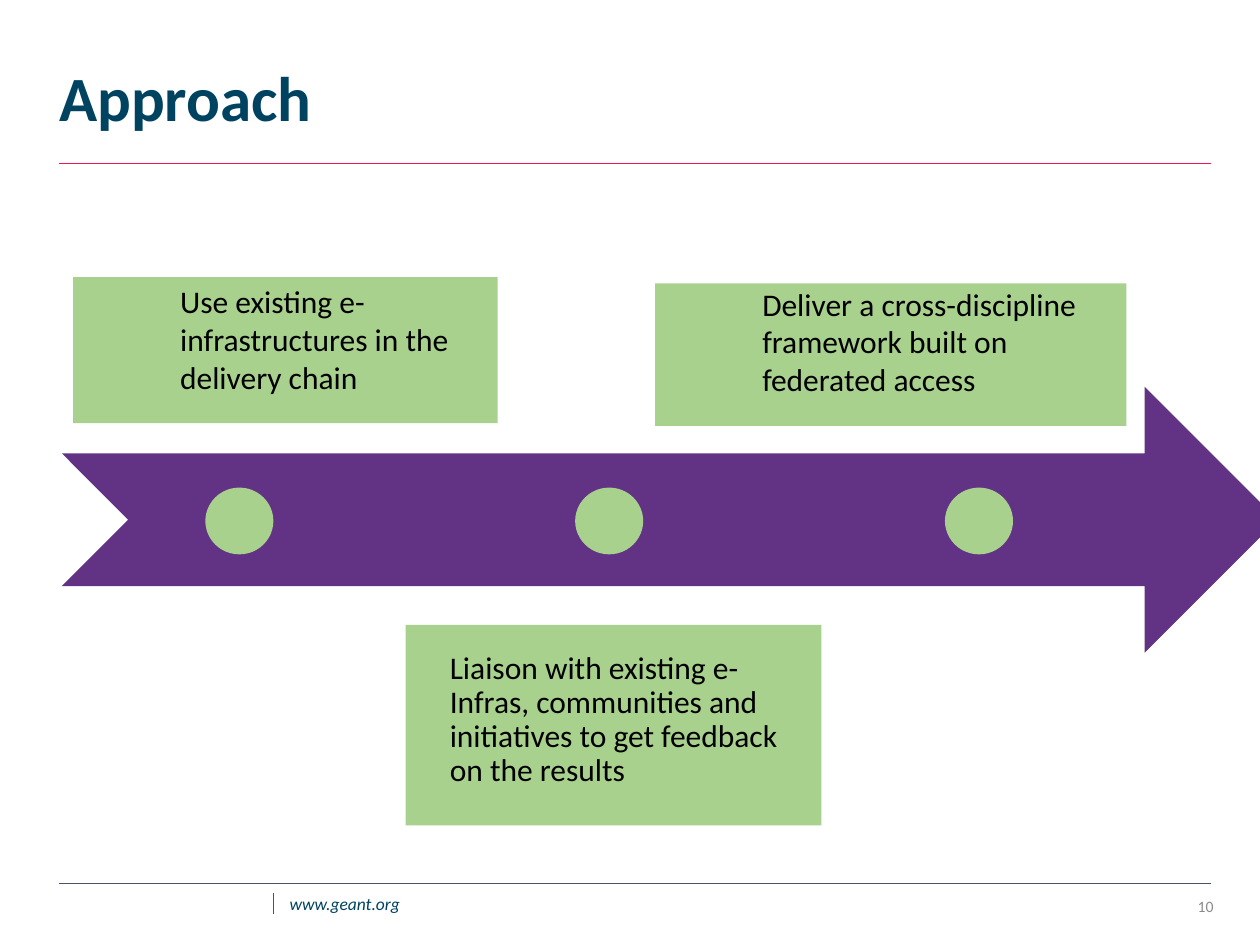
from dataclasses import dataclass

import pptx
import pptx.dml.color
import pptx.enum.shapes
import pptx.enum.text
import pptx.oxml.ns
import pptx.util
from pptx.dml.color import RGBColor
from pptx.enum.shapes import MSO_SHAPE
from pptx.enum.text import MSO_ANCHOR, PP_ALIGN
from pptx.util import Inches, Pt

FONT = "Calibri"
TEAL = RGBColor(0x00, 0x43, 0x61)
PINK = RGBColor(0xED, 0x15, 0x56)
SLATE = RGBColor(0x44, 0x54, 0x6A)
GREY = RGBColor(0x8C, 0x8C, 0x8C)
PURPLE = RGBColor(0x62, 0x33, 0x84)
GREEN = RGBColor(0xA9, 0xD1, 0x8E)
BLACK = RGBColor(0x00, 0x00, 0x00)

FIRST_DOT_LEFT = 1.63
DOT_STEP = 2.935


@dataclass(frozen=True)
class Box:
    left: float
    top: float
    width: float
    height: float

    def lengths(self) -> list[int]:
        return [Inches(v) for v in (self.left, self.top, self.width, self.height)]


@dataclass(frozen=True)
class Step:
    text: str
    box: Box
    above_arrow: bool


@dataclass(frozen=True)
class Rule:
    start: tuple[float, float]
    end: tuple[float, float]
    color: RGBColor


STEPS = [
    Step("Use existing e-infrastructures in the delivery chain",
         Box(0.58, 2.2, 3.37, 1.16), True),
    Step("Liaison with existing e-Infras, communities and initiatives "
         "to get feedback on the results",
         Box(3.22, 4.96, 3.3, 1.59), False),
    Step("Deliver a cross-discipline framework built on federated access",
         Box(5.2, 2.25, 3.74, 1.13), True),
]

RULES = [
    Rule((0.47, 1.3), (9.61, 1.3), PINK),
    Rule((0.47, 7.01), (9.61, 7.01), SLATE),
    Rule((2.17, 7.09), (2.17, 7.25), SLATE),
]


def style_text(frame, size: float, color: RGBColor, bold=False, italic=False) -> None:
    for run in frame.paragraphs[0].runs:
        run.font.name = FONT
        run.font.size = Pt(size)
        run.font.color.rgb = color
        run.font.bold = bold
        run.font.italic = italic


def add_filled(slide, kind: MSO_SHAPE, box: Box, color: RGBColor):
    shape = slide.shapes.add_shape(kind, *box.lengths())
    shape.shadow.inherit = False
    shape.fill.solid()
    shape.fill.fore_color.rgb = color
    shape.line.fill.background()
    return shape


def add_rule(slide, rule: Rule) -> None:
    ends = [Inches(v) for v in (*rule.start, *rule.end)]
    line = slide.shapes.add_connector(pptx.enum.shapes.MSO_CONNECTOR.STRAIGHT, *ends)
    line.line.color.rgb = rule.color
    line.line.width = Pt(0.5)
    pptx.oxml.ns.qn("a:effectLst")
    line._element.spPr.get_or_add_effectLst() if hasattr(
        line._element.spPr, "get_or_add_effectLst") else None


def add_label(slide, text: str, box: Box):
    frame = slide.shapes.add_textbox(*box.lengths()).text_frame
    frame.word_wrap = True
    frame.text = text
    return frame


def add_step(slide, step: Step) -> None:
    """Draw a step box; those above the arrow are indented and sit at the bottom."""
    frame = add_filled(slide, MSO_SHAPE.RECTANGLE, step.box, GREEN).text_frame
    frame.word_wrap = True
    frame.margin_left = Inches(0.35)
    frame.margin_right = frame.margin_top = frame.margin_bottom = Inches(0.22)
    frame.text = step.text
    paragraph = frame.paragraphs[0]
    paragraph.alignment = PP_ALIGN.LEFT
    if step.above_arrow:
        frame.vertical_anchor = MSO_ANCHOR.BOTTOM
        paragraph.level = 1
        properties = paragraph._p.get_or_add_pPr()
        properties.set("marL", str(Inches(0.5)))
        properties.set("indent", "0")
    else:
        frame.vertical_anchor = MSO_ANCHOR.TOP
        paragraph.line_spacing = 0.9
    style_text(frame, 18, BLACK)


def add_title(slide, text: str, box: Box) -> None:
    title = slide.shapes.title
    title.left, title.top, title.width, title.height = box.lengths()
    frame = title.text_frame
    frame.text = text
    frame.vertical_anchor = MSO_ANCHOR.MIDDLE
    frame.paragraphs[0].alignment = PP_ALIGN.LEFT
    frame.paragraphs[0].line_spacing = 0.9
    style_text(frame, 36, TEAL, bold=True)


def main() -> None:
    deck = pptx.Presentation()
    deck.slide_width, deck.slide_height = Inches(10), Inches(7.5)
    slide = deck.slides.add_slide(deck.slide_layouts.get_by_name("Title Only"))

    for rule in RULES:
        add_rule(slide, rule)
    address = add_label(slide, "www.geant.org", Box(2.2, 7.04, 1.39, 0.27))
    style_text(address, 10, TEAL, italic=True)
    number = add_label(slide, "10", Box(9.31, 6.99, 0.42, 0.4))
    number.vertical_anchor = MSO_ANCHOR.MIDDLE
    number.paragraphs[0].alignment = PP_ALIGN.RIGHT
    style_text(number, 9, GREY)

    add_title(slide, "Approach", Box(0.37, 0.08, 7.88, 1.45))
    add_filled(slide, MSO_SHAPE.NOTCHED_RIGHT_ARROW, Box(0.49, 3.07, 9.65, 2.11), PURPLE)
    for index, step in enumerate(STEPS):
        add_step(slide, step)
        dot = Box(FIRST_DOT_LEFT + index * DOT_STEP, 3.87, 0.54, 0.53)
        add_filled(slide, MSO_SHAPE.OVAL, dot, GREEN)

    deck.save("out.pptx")


if __name__ == "__main__":
    main()
